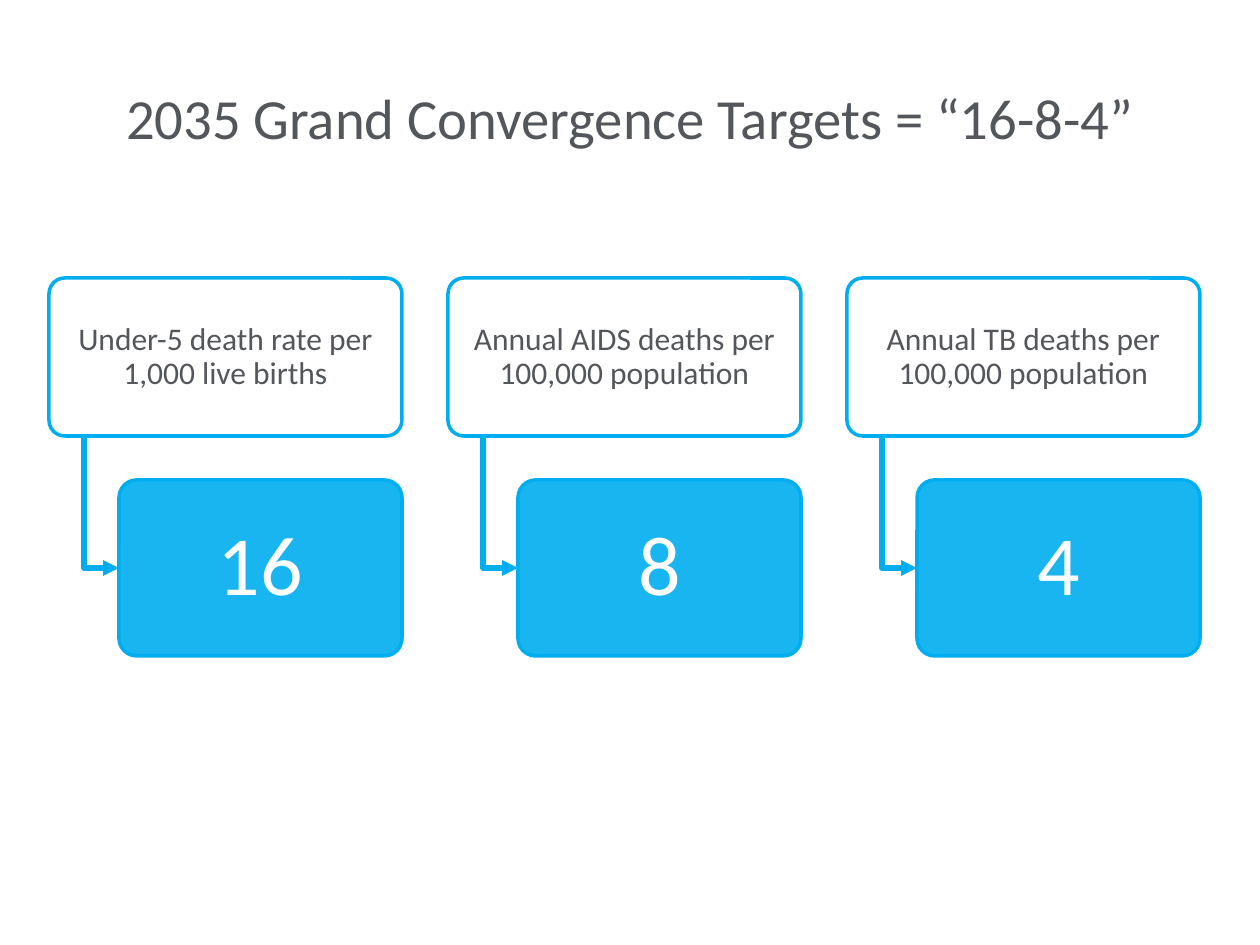
import pptx
import pptx.util
import pptx.dml.color
import pptx.enum.shapes
import pptx.enum.text
import pptx.oxml.ns
from lxml import etree

EMU_PER_PX = 914400 / 126
FONT = "Calibri"
GREY = pptx.dml.color.RGBColor(0x53, 0x56, 0x5A)
BLUE = pptx.dml.color.RGBColor(0x00, 0xAE, 0xEF)
WHITE = pptx.dml.color.RGBColor(0xFF, 0xFF, 0xFF)

TARGETS = [
    ("Under-5 death rate per 1,000 live births", "16"),
    ("Annual AIDS deaths per 100,000 population", "8"),
    ("Annual TB deaths per 100,000 population", "4"),
]
COLUMN_WIDTH, COLUMN_HEIGHT, COLUMN_PITCH = 353, 378, 399
LABEL_HEIGHT, VALUE_HEIGHT = 158, 176


def px(length):
    return pptx.util.Emu(round(length * EMU_PER_PX))


def add_child(parent, tag, **attributes):
    child = etree.SubElement(parent, pptx.oxml.ns.qn(tag))
    for name, value in attributes.items():
        child.set(name, value)
    return child


def write_text(shape, text, size, color):
    frame = shape.text_frame
    frame.word_wrap = True
    frame.vertical_anchor = pptx.enum.text.MSO_ANCHOR.MIDDLE
    frame.text = text
    para = frame.paragraphs[0]
    para.alignment = pptx.enum.text.PP_ALIGN.CENTER
    para.font.name = FONT
    para.font.size = pptx.util.Pt(size)
    para.font.color.rgb = color
    return para


def add_title(page, left, top, width, height):
    title = page.shapes.title
    title.left, title.top = px(left), px(top)
    title.width, title.height = px(width), px(height)
    write_text(title, "2035 Grand Convergence Targets = “16-8-4”", 32.4, GREY)


def add_card(page, left, top, width, height, text, size, color, fill):
    card = page.shapes.add_shape(
        pptx.enum.shapes.MSO_SHAPE.ROUNDED_RECTANGLE,
        px(left), px(top), px(width), px(height))
    card.adjustments[0] = 0.1
    card.shadow.inherit = False
    card.fill.solid()
    card.fill.fore_color.rgb = fill
    card.line.color.rgb = BLUE
    card.line.width = pptx.util.Pt(2)
    frame = card.text_frame
    frame.margin_left = frame.margin_right = px(10)
    frame.margin_top = frame.margin_bottom = px(8)
    write_text(card, text, size, color).line_spacing = 0.9
    return card


def add_elbow_arrow(page, left, top, right, bottom):
    builder = page.shapes.build_freeform(px(left), px(top))
    builder.add_line_segments(
        [(px(left), px(bottom)), (px(right), px(bottom))], close=False)
    arrow = builder.convert_to_shape()
    arrow.shadow.inherit = False
    arrow.fill.background()
    arrow.line.color.rgb = BLUE
    arrow.line.width = pptx.util.Pt(3)
    add_child(arrow.line._get_or_add_ln(), "a:tailEnd", type="triangle")


def add_target(page, left, top, width, height, label, value):
    """Place a label card with an arrow to the indented value card below it."""
    indent = width // 5
    value_top = top + height - VALUE_HEIGHT
    add_card(page, left, top, width, LABEL_HEIGHT, label, 18, GREY, WHITE)
    add_elbow_arrow(page, left + indent // 2, top + LABEL_HEIGHT,
                    left + indent, value_top + VALUE_HEIGHT // 2)
    card = add_card(page, left + indent, value_top, width - indent,
                    VALUE_HEIGHT, value, 48, WHITE, BLUE)
    color = card.fill._xPr.find(".//" + pptx.oxml.ns.qn("a:srgbClr"))
    add_child(color, "a:alpha", val="90000")


def main():
    deck = pptx.Presentation()
    deck.slide_width, deck.slide_height = px(1260), px(945)
    page = deck.slides.add_slide(deck.slide_layouts[5])
    add_title(page, 63, 38, 1134, 157)
    for column, (label, value) in enumerate(TARGETS):
        add_target(page, 49 + column * COLUMN_PITCH, 278,
                   COLUMN_WIDTH, COLUMN_HEIGHT, label, value)
    deck.save("out.pptx")


if __name__ == "__main__":
    main()
